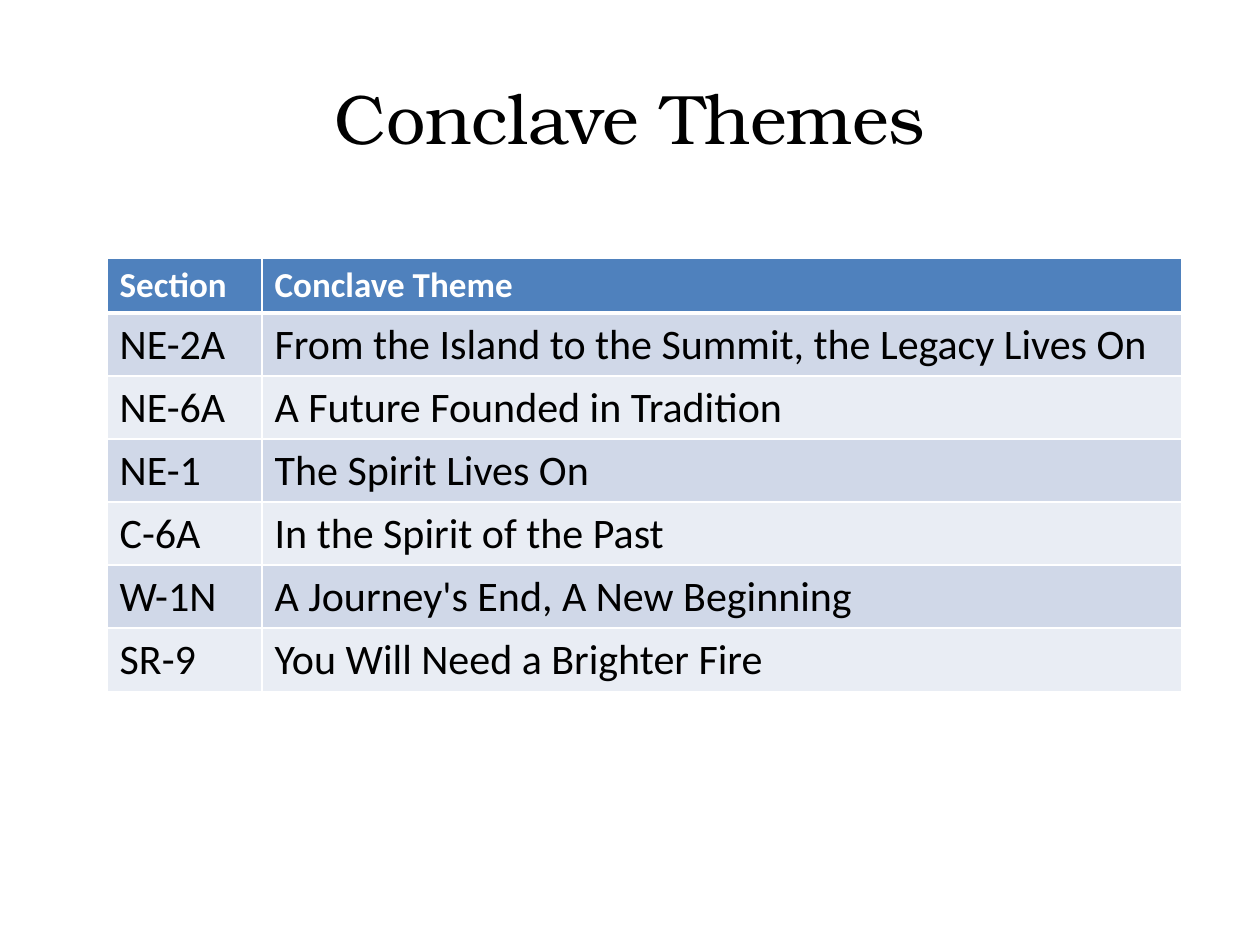
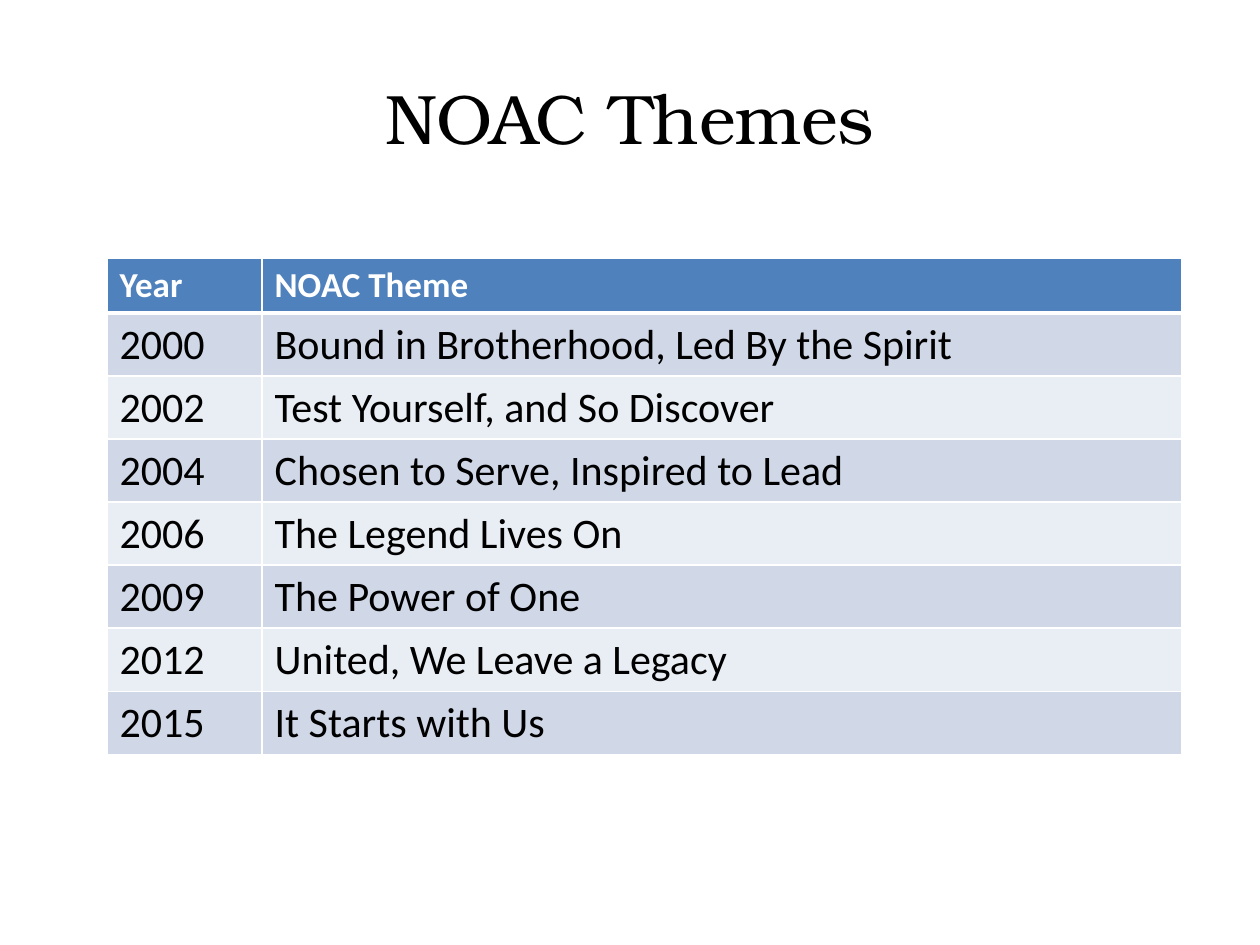
import dataclasses

import lxml.etree
import pptx
import pptx.dml.color
import pptx.enum.text
import pptx.oxml.ns
import pptx.util


@dataclasses.dataclass(frozen=True)
class Theme:
    """Hold the colours, fonts and type sizes that the slides share."""

    white: str = "FFFFFF"
    ink: str = "000000"
    header: str = "4F81BD"
    bands: tuple = ("D0D8E8", "E9EDF4")
    title_font: str = "TeX Gyre Bonum"
    body_font: str = "Calibri"
    title_size: int = 40
    header_size: int = 20
    body_size: int = 24
    thin_rule: int = 1
    thick_rule: int = 3


THEME = Theme()
SLIDE_WIDTH = pptx.util.Inches(10)
SLIDE_HEIGHT = pptx.util.Inches(7.5)
TITLE_BOX = (0.05, 0.04, 0.9, 1 / 6)
TABLE_CORNER = (0.085, 2.05 / 7.5)
COLUMN_SHARES = (0.123, 0.73)
HEADER_SHARE = 0.41 / 7.5
ROW_SHARE = 0.5 / 7.5

CONCLAVE_THEMES = [
    ("Section", "Conclave Theme"),
    ("NE-2A", "From the Island to the Summit, the Legacy Lives On"),
    ("NE-6A", "A Future Founded in Tradition"),
    ("NE-1", "The Spirit Lives On"),
    ("C-6A", "In the Spirit of the Past"),
    ("W-1N", "A Journey's End, A New Beginning"),
    ("SR-9", "You Will Need a Brighter Fire"),
]
NOAC_THEMES = [
    ("Year", "NOAC Theme"),
    ("2000", "Bound in Brotherhood, Led By the Spirit"),
    ("2002", "Test Yourself, and So Discover"),
    ("2004", "Chosen to Serve, Inspired to Lead"),
    ("2006", "The Legend Lives On"),
    ("2009", "The Power of One"),
    ("2012", "United, We Leave a Legacy"),
    ("2015", "It Starts with Us"),
]


def across(share):
    """Return a share of the slide's width as a length."""
    return round(SLIDE_WIDTH * share)


def down(share):
    """Return a share of the slide's height as a length."""
    return round(SLIDE_HEIGHT * share)


def rgb(code):
    """Return the colour for a hexadecimal code."""
    return pptx.dml.color.RGBColor.from_string(code)


def add_run(paragraph, text, font_name, size, color, bold=False):
    """Add one formatted run to a paragraph."""
    run = paragraph.add_run()
    run.text = text
    run.font.name = font_name
    run.font.size = pptx.util.Pt(size)
    run.font.color.rgb = rgb(color)
    run.font.bold = bold


def add_title(slide, text):
    """Add the centred slide title."""
    left, top, width, height = TITLE_BOX
    box = slide.shapes.add_textbox(across(left), down(top), across(width), down(height))
    frame = box.text_frame
    frame.word_wrap = True
    frame.vertical_anchor = pptx.enum.text.MSO_ANCHOR.MIDDLE
    paragraph = frame.paragraphs[0]
    paragraph.alignment = pptx.enum.text.PP_ALIGN.CENTER
    add_run(paragraph, text, THEME.title_font, THEME.title_size, THEME.ink)


def set_borders(cell, top, bottom):
    """Draw white borders around a cell, with top and bottom widths in points."""
    properties = cell._tc.get_or_add_tcPr()
    qualify = pptx.oxml.ns.qn
    widths = {"lnL": THEME.thin_rule, "lnR": THEME.thin_rule, "lnT": top, "lnB": bottom}
    for position, (side, width) in enumerate(widths.items()):
        line = lxml.etree.Element(qualify(f"a:{side}"), w=str(pptx.util.Pt(width)))
        fill = lxml.etree.SubElement(line, qualify("a:solidFill"))
        lxml.etree.SubElement(fill, qualify("a:srgbClr"), val=THEME.white)
        properties.insert(position, line)


def fill_cell(cell, text, row_index):
    """Write a cell and style it by its row."""
    is_header = row_index == 0
    cell.fill.solid()
    band = THEME.bands[(row_index - 1) % len(THEME.bands)]
    cell.fill.fore_color.rgb = rgb(THEME.header if is_header else band)
    size = THEME.header_size if is_header else THEME.body_size
    color = THEME.white if is_header else THEME.ink
    add_run(cell.text_frame.paragraphs[0], text, THEME.body_font, size, color, is_header)
    set_borders(
        cell,
        top=THEME.thick_rule if row_index == 1 else THEME.thin_rule,
        bottom=THEME.thick_rule if is_header else THEME.thin_rule,
    )


def add_theme_table(slide, rows):
    """Add a banded table whose first row is the header."""
    left, top = TABLE_CORNER
    height = HEADER_SHARE + ROW_SHARE * (len(rows) - 1)
    table = slide.shapes.add_table(
        len(rows), len(COLUMN_SHARES),
        across(left), down(top), across(sum(COLUMN_SHARES)), down(height),
    ).table
    for column, share in zip(table.columns, COLUMN_SHARES):
        column.width = across(share)
    for row_index, values in enumerate(rows):
        table.rows[row_index].height = down(ROW_SHARE if row_index else HEADER_SHARE)
        for cell, text in zip(table.rows[row_index].cells, values):
            fill_cell(cell, text, row_index)


def add_theme_slide(presentation, title, rows):
    """Add a slide with a title and a table of themes."""
    slide = presentation.slides.add_slide(presentation.slide_layouts[6])
    slide.background.fill.solid()
    slide.background.fill.fore_color.rgb = rgb(THEME.white)
    add_title(slide, title)
    add_theme_table(slide, rows)


def main():
    """Build and save the presentation."""
    presentation = pptx.Presentation()
    presentation.slide_width = SLIDE_WIDTH
    presentation.slide_height = SLIDE_HEIGHT
    add_theme_slide(presentation, "Conclave Themes", CONCLAVE_THEMES)
    add_theme_slide(presentation, "NOAC Themes", NOAC_THEMES)
    presentation.save("out.pptx")


if __name__ == "__main__":
    main()
